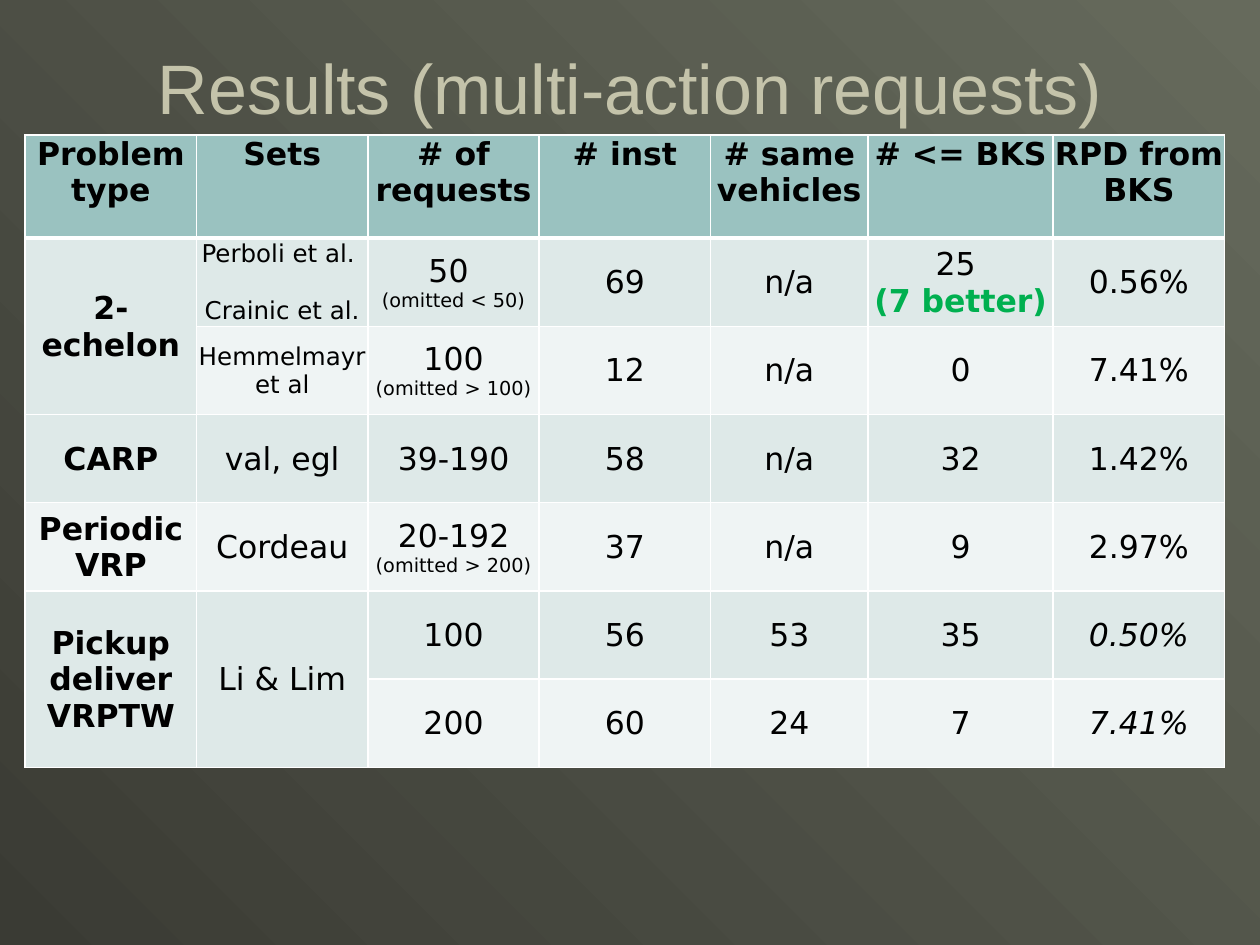
import pptx
import pptx.dml.color
import pptx.enum.text
import pptx.oxml
import pptx.oxml.ns
import pptx.util

Inches = pptx.util.Inches
Pt = pptx.util.Pt
RGBColor = pptx.dml.color.RGBColor
CENTER = pptx.enum.text.PP_ALIGN.CENTER
ANCHOR = pptx.enum.text.MSO_ANCHOR

BACKGROUND_DARK = RGBColor(0x3A, 0x3B, 0x34)
BACKGROUND_LIGHT = RGBColor(0x66, 0x6A, 0x5C)
TITLE_COLOR = RGBColor(0xC4, 0xC3, 0xAA)
HEADER_FILL = RGBColor(0x9A, 0xC2, 0xC0)
BAND_FILLS = (RGBColor(0xDE, 0xE9, 0xE8), RGBColor(0xEF, 0xF4, 0xF4))
BLACK = RGBColor(0, 0, 0)
GREEN = RGBColor(0x00, 0xB0, 0x50)
WHITE = RGBColor(0xFF, 0xFF, 0xFF)

TITLE = "Results (multi-action requests)"
BOLD = {"bold": True}
ITALIC = {"italic": True}
SOURCE = {"size": 14}
SPACED_SOURCE = {"size": 14, "before": 16.3}
NOTE = {"size": 11}
BETTER = {"bold": True, "color": GREEN}

HEADERS = ["Problem type", "Sets", "# of requests", "# inst",
           "# same vehicles", "# <= BKS", "RPD from BKS"]
RESULTS = [
    [[("2-echelon", BOLD)],
     [("Perboli et al. ", SOURCE), ("Crainic et al.", SPACED_SOURCE)],
     ["50 ", ("(omitted < 50)", NOTE)], ["69"], ["n/a"],
     ["25 ", ("(7 better)", BETTER)], ["0.56%"]],
    [None, [("Hemmelmayr et al", SOURCE)],
     ["100", ("(omitted > 100)", NOTE)], ["12"], ["n/a"], ["0"], ["7.41%"]],
    [[("CARP", BOLD)], ["val, egl"], ["39-190"], ["58"], ["n/a"], ["32"], ["1.42%"]],
    [[("Periodic VRP", BOLD)], ["Cordeau"],
     ["20-192", ("(omitted > 200)", NOTE)], ["37"], ["n/a"], ["9"], ["2.97%"]],
    [[("Pickup deliver", BOLD), ("VRPTW", BOLD)], ["Li & Lim"],
     ["100"], ["56"], ["53"], ["35"], [("0.50%", ITALIC)]],
    [None, None, ["200"], ["60"], ["24"], ["7"], [("7.41%", ITALIC)]],
]
COLUMN_WIDTHS = [1.36, 1.36, 1.36, 1.36, 1.25, 1.47, 1.36]
HEADER_HEIGHT, RESULT_HEIGHT = 0.82, 0.7


def add_run(paragraph, text, font_name, size, color, bold=False, italic=False):
    paragraph.alignment = CENTER
    run = paragraph.add_run()
    run.text = text
    run.font.name = font_name
    run.font.size = Pt(size)
    run.font.color.rgb = color
    run.font.bold = bold
    run.font.italic = italic


def write_cell(cell, lines):
    for index, line in enumerate(lines):
        text, style = (line, {}) if isinstance(line, str) else line
        frame = cell.text_frame
        paragraph = frame.add_paragraph() if index else frame.paragraphs[0]
        paragraph.space_before = Pt(style.get("before", 0))
        add_run(paragraph, text, "DejaVu Sans", style.get("size", 18),
                style.get("color", BLACK), style.get("bold", False),
                style.get("italic", False))


def set_borders(cell, top, bottom):
    properties = cell._tc.get_or_add_tcPr()
    widths = {"lnL": 1, "lnR": 1, "lnT": top, "lnB": bottom}
    for index, (side, width) in enumerate(widths.items()):
        properties.insert(index, pptx.oxml.parse_xml(
            f'<a:{side} {pptx.oxml.ns.nsdecls("a")} w="{Pt(width)}">'
            f'<a:solidFill><a:srgbClr val="{WHITE}"/></a:solidFill></a:{side}>'))


def add_title(slide):
    title = slide.shapes.title
    title.left, title.top = Inches(0.5), Inches(0.3)
    title.width, title.height = Inches(9), Inches(1.25)
    title.text_frame.vertical_anchor = ANCHOR.TOP
    add_run(title.text_frame.paragraphs[0], TITLE, "Arial", 40, TITLE_COLOR)


def add_results(slide):
    rows = [[[(header, BOLD)] for header in HEADERS]] + RESULTS
    heights = [HEADER_HEIGHT] + [RESULT_HEIGHT] * len(RESULTS)
    table = slide.shapes.add_table(
        len(rows), len(HEADERS), Inches(0.2), Inches(1.07),
        Inches(sum(COLUMN_WIDTHS)), Inches(sum(heights))).table
    for column, width in zip(table.columns, COLUMN_WIDTHS):
        column.width = Inches(width)
    for r, (row, height) in enumerate(zip(rows, heights)):
        table.rows[r].height = Inches(height)
        for c, lines in enumerate(row):
            cell = table.cell(r, c)
            cell.margin_left = cell.margin_right = cell.margin_top = Inches(0.01)
            cell.margin_bottom = 0
            cell.vertical_anchor = ANCHOR.MIDDLE if r else ANCHOR.TOP
            cell.fill.solid()
            cell.fill.fore_color.rgb = BAND_FILLS[(r - 1) % 2] if r else HEADER_FILL
            set_borders(cell, top=3 if r == 1 else 1, bottom=1 if r else 3)
            if lines is None:
                table.cell(r - 1, c).merge(cell)
            else:
                write_cell(cell, lines)


def main():
    deck = pptx.Presentation()
    deck.slide_width, deck.slide_height = Inches(10), Inches(7.5)
    slide = deck.slides.add_slide(deck.slide_layouts[5])
    background = slide.background.fill
    background.gradient()
    background.gradient_angle = 45
    for stop, position, color in zip(background.gradient_stops, (0, 1),
                                     (BACKGROUND_DARK, BACKGROUND_LIGHT)):
        stop.position = position
        stop.color.rgb = color
    add_title(slide)
    add_results(slide)
    deck.save("out.pptx")


if __name__ == "__main__":
    main()
